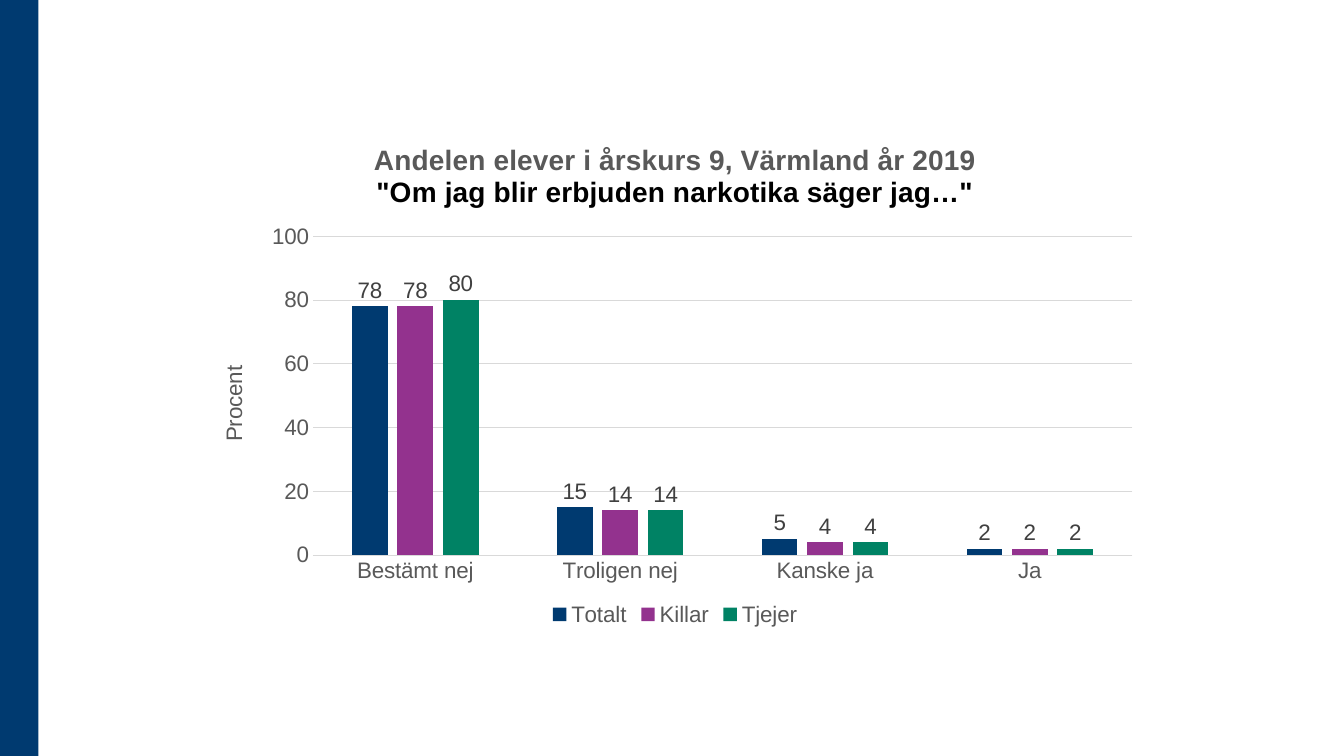
from dataclasses import dataclass

from lxml import etree
from pptx import Presentation
from pptx.chart.data import CategoryChartData
from pptx.dml.color import RGBColor
from pptx.enum.chart import XL_CHART_TYPE, XL_LABEL_POSITION, XL_LEGEND_POSITION, XL_TICK_MARK
from pptx.enum.shapes import MSO_SHAPE
from pptx.oxml.ns import qn
from pptx.util import Inches, Pt

COLUMN_CLUSTERED = XL_CHART_TYPE.COLUMN_CLUSTERED
OUTSIDE_END = XL_LABEL_POSITION.OUTSIDE_END
LEGEND_BOTTOM = XL_LEGEND_POSITION.BOTTOM
NO_TICK = XL_TICK_MARK.NONE
RECTANGLE = MSO_SHAPE.RECTANGLE


@dataclass(frozen=True)
class Theme:
    font: str = "Arial"
    title_size: int = 20
    text_size: int = 16
    line_width: float = 0.75
    navy: str = "003A70"
    purple: str = "93328E"
    green: str = "008264"
    black: str = "000000"
    gray: str = "595959"
    label: str = "404040"
    grid: str = "D9D9D9"


THEME = Theme()
SLIDE_WIDTH, SLIDE_HEIGHT = Inches(13.33), Inches(7.5)
BAND_BOX = (0, 0, Inches(0.38), SLIDE_HEIGHT)
CHART_BOX = (Inches(1.97), Inches(1.24), Inches(9.45), Inches(5.02))
PLOT_SHARES = {"x": 0.12, "y": 0.22, "w": 0.86, "h": 0.63}
CATEGORIES = ["Bestämt nej", "Troligen nej", "Kanske ja", "Ja"]
SERIES = [
    ("Totalt", (78, 15, 5, 2), THEME.navy),
    ("Killar", (78, 14, 4, 2), THEME.purple),
    ("Tjejer", (80, 14, 4, 2), THEME.green),
]
TITLE_LINES = [
    ("Andelen elever i årskurs 9, Värmland år 2019", THEME.gray),
    ("\"Om jag blir erbjuden narkotika säger jag…\"", THEME.black),
]


def style_font(font, color=THEME.gray, size=THEME.text_size, bold=False):
    font.name = THEME.font
    font.size = Pt(size)
    font.bold = bold
    font.color.rgb = RGBColor.from_string(color)


def write_text(paragraph, text, **font_format):
    run = paragraph.add_run()
    run.text = text
    style_font(run.font, **font_format)


def style_line(line):
    line.color.rgb = RGBColor.from_string(THEME.grid)
    line.width = Pt(THEME.line_width)


def add_side_band(slide, box):
    band = slide.shapes.add_shape(RECTANGLE, *box)
    band.shadow.inherit = False
    band.fill.solid()
    band.fill.fore_color.rgb = RGBColor.from_string(THEME.navy)
    band.line.fill.background()


def write_chart_title(chart):
    chart.has_title = True
    chart.chart_title.include_in_layout = False
    frame = chart.chart_title.text_frame
    for index, (text, color) in enumerate(TITLE_LINES):
        paragraph = frame.add_paragraph() if index else frame.paragraphs[0]
        write_text(paragraph, text, color=color, size=THEME.title_size, bold=True)


def style_axes(chart):
    for axis in (chart.category_axis, chart.value_axis):
        axis.major_tick_mark = NO_TICK
        axis.minor_tick_mark = NO_TICK
        style_font(axis.tick_labels.font)
    style_line(chart.category_axis.format.line)
    value_axis = chart.value_axis
    value_axis.minimum_scale = 0
    value_axis.maximum_scale = 100
    value_axis.major_unit = 20
    value_axis.tick_labels.number_format = "0"
    value_axis.tick_labels.number_format_is_linked = False
    value_axis.format.line.fill.background()
    value_axis.has_major_gridlines = True
    style_line(value_axis.major_gridlines.format.line)
    value_axis.has_title = True
    write_text(value_axis.axis_title.text_frame.paragraphs[0], "Procent")


def style_series(plot):
    plot.gap_width = 219
    plot.overlap = -27
    plot.vary_by_categories = False
    for series, (_, _, color) in zip(plot.series, SERIES):
        series.format.fill.solid()
        series.format.fill.fore_color.rgb = RGBColor.from_string(color)
        labels = series.data_labels
        labels.show_value = True
        labels.position = OUTSIDE_END
        labels.number_format = "0"
        labels.number_format_is_linked = False
        style_font(labels.font, color=THEME.label)


def place_plot(chart, shares):
    plot_area = chart.element.find(".//" + qn("c:plotArea"))
    layout = plot_area.find(qn("c:layout"))
    if layout is None:
        layout = etree.Element(qn("c:layout"))
        plot_area.insert(0, layout)
    manual = etree.SubElement(layout, qn("c:manualLayout"))
    settings = {"layoutTarget": "inner", "xMode": "edge", "yMode": "edge", **shares}
    for name, value in settings.items():
        etree.SubElement(manual, qn(f"c:{name}")).set("val", str(value))


def add_answer_chart(slide, box):
    data = CategoryChartData(number_format="0")
    data.categories = CATEGORIES
    for name, values, _ in SERIES:
        data.add_series(name, values)
    chart = slide.shapes.add_chart(COLUMN_CLUSTERED, *box, data).chart
    style_font(chart.font, color=THEME.black)
    write_chart_title(chart)
    style_axes(chart)
    style_series(chart.plots[0])
    place_plot(chart, PLOT_SHARES)
    chart.has_legend = True
    chart.legend.position = LEGEND_BOTTOM
    chart.legend.include_in_layout = False
    style_font(chart.legend.font)


def main():
    presentation = Presentation()
    presentation.slide_width = SLIDE_WIDTH
    presentation.slide_height = SLIDE_HEIGHT
    slide = presentation.slides.add_slide(presentation.slide_layouts[6])
    add_side_band(slide, BAND_BOX)
    add_answer_chart(slide, CHART_BOX)
    presentation.save("out.pptx")


if __name__ == "__main__":
    main()
